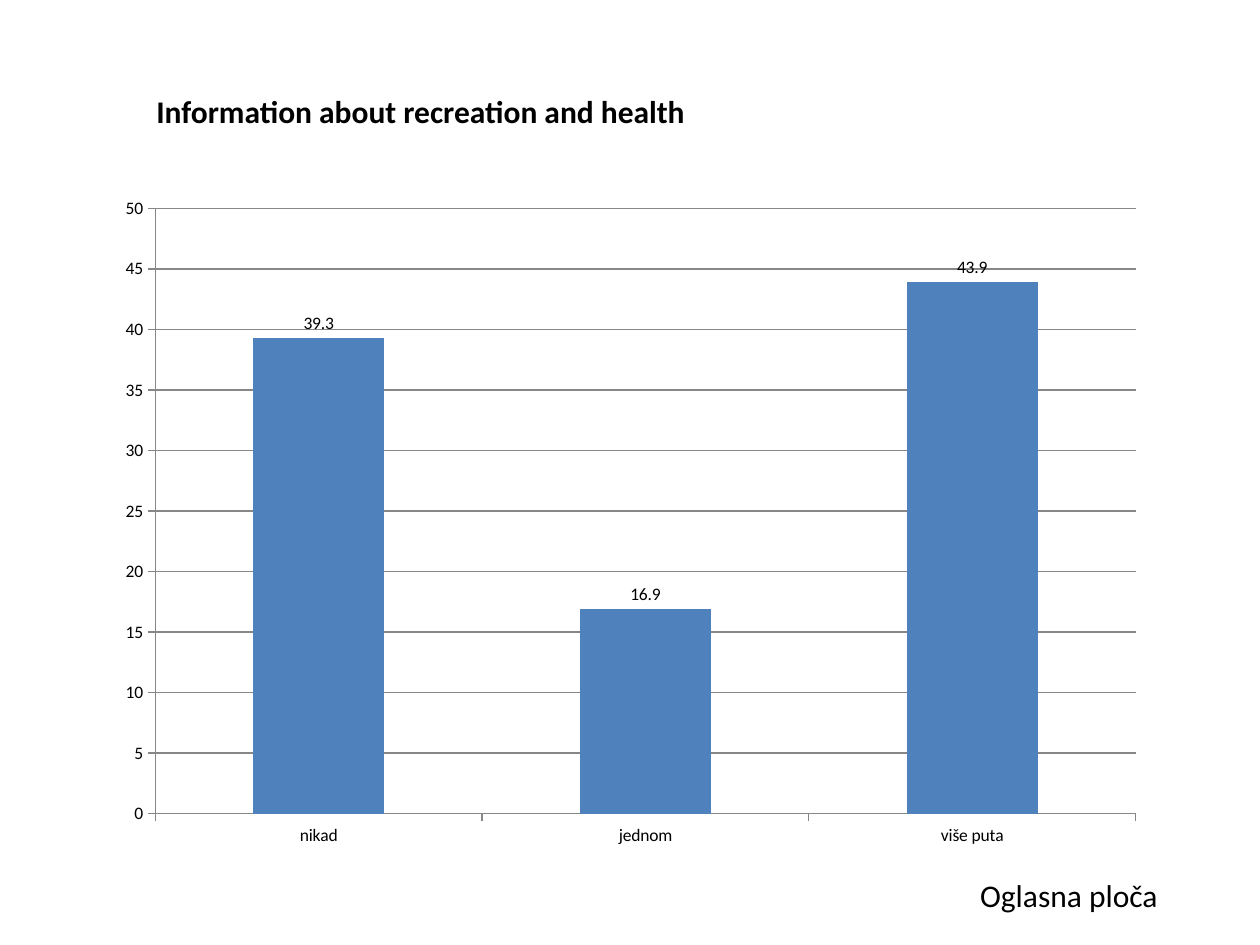
from pptx import Presentation
from pptx.chart.data import CategoryChartData
from pptx.dml.color import RGBColor
from pptx.enum.chart import XL_CHART_TYPE, XL_LABEL_POSITION, XL_TICK_MARK
from pptx.enum.text import MSO_ANCHOR, MSO_AUTO_SIZE, PP_ALIGN
from pptx.util import Inches, Pt

FONT = "Calibri"
BLACK, BLUE, GRAY = "000000", "4F81BD", "878787"
ANSWERS = {"nikad": 39.3, "jednom": 16.9, "više puta": 43.9}


def rgb(hex_color):
    return RGBColor.from_string(hex_color)


def box(left, top, width, height):
    return [Inches(v) for v in (left, top, width, height)]


def style_font(font, size, bold=False):
    font.name, font.size, font.bold = FONT, Pt(size), bold
    font.color.rgb = rgb(BLACK)


def write_text(sp, text, bold=False):
    tf = sp.text_frame
    tf.text = text
    tf.word_wrap = True
    tf.auto_size = MSO_AUTO_SIZE.SHAPE_TO_FIT_TEXT
    tf.vertical_anchor = MSO_ANCHOR.TOP
    p = tf.paragraphs[0]
    p.alignment = PP_ALIGN.LEFT
    style_font(p.font, 18, bold)


def add_title(slide, text, area):
    sp = slide.shapes.title
    sp.left, sp.top, sp.width, sp.height = area
    write_text(sp, text, bold=True)


def style_line(line):
    line.color.rgb = rgb(GRAY)
    line.width = Pt(0.75)


def add_column_chart(slide, values, area):
    data = CategoryChartData()
    data.categories = list(values)
    data.add_series("Series 1", list(values.values()))
    chart = slide.shapes.add_chart(
        XL_CHART_TYPE.COLUMN_CLUSTERED, *area, data).chart
    chart.has_legend = chart.has_title = False
    style_font(chart.font, 10)

    for axis in (chart.category_axis, chart.value_axis):
        axis.major_tick_mark = XL_TICK_MARK.OUTSIDE
        axis.minor_tick_mark = XL_TICK_MARK.NONE
        style_line(axis.format.line)
    axis = chart.value_axis
    axis.minimum_scale, axis.maximum_scale, axis.major_unit = 0, 50, 5
    axis.has_major_gridlines = True
    style_line(axis.major_gridlines.format.line)

    plot = chart.plots[0]
    plot.gap_width = 150
    plot.vary_by_categories = False
    fill = plot.series[0].format.fill
    fill.solid()
    fill.fore_color.rgb = rgb(BLUE)
    labels = plot.series[0].data_labels
    labels.show_value = True
    labels.position = XL_LABEL_POSITION.OUTSIDE_END
    style_font(labels.font, 10)


def main():
    prs = Presentation()
    prs.slide_width, prs.slide_height = Inches(10), Inches(7.5)
    slide = prs.slides.add_slide(prs.slide_layouts.get_by_name("Title Only"))
    add_title(slide, "Information about recreation and health",
              box(1.14, 0.68, 7.24, 0.4))
    add_column_chart(slide, ANSWERS, box(0.83, 1.47, 8.35, 5.35))
    caption = slide.shapes.add_textbox(*box(7.68, 6.9, 2.05, 0.4))
    write_text(caption, "Oglasna ploča")
    prs.save("out.pptx")


if __name__ == "__main__":
    main()
